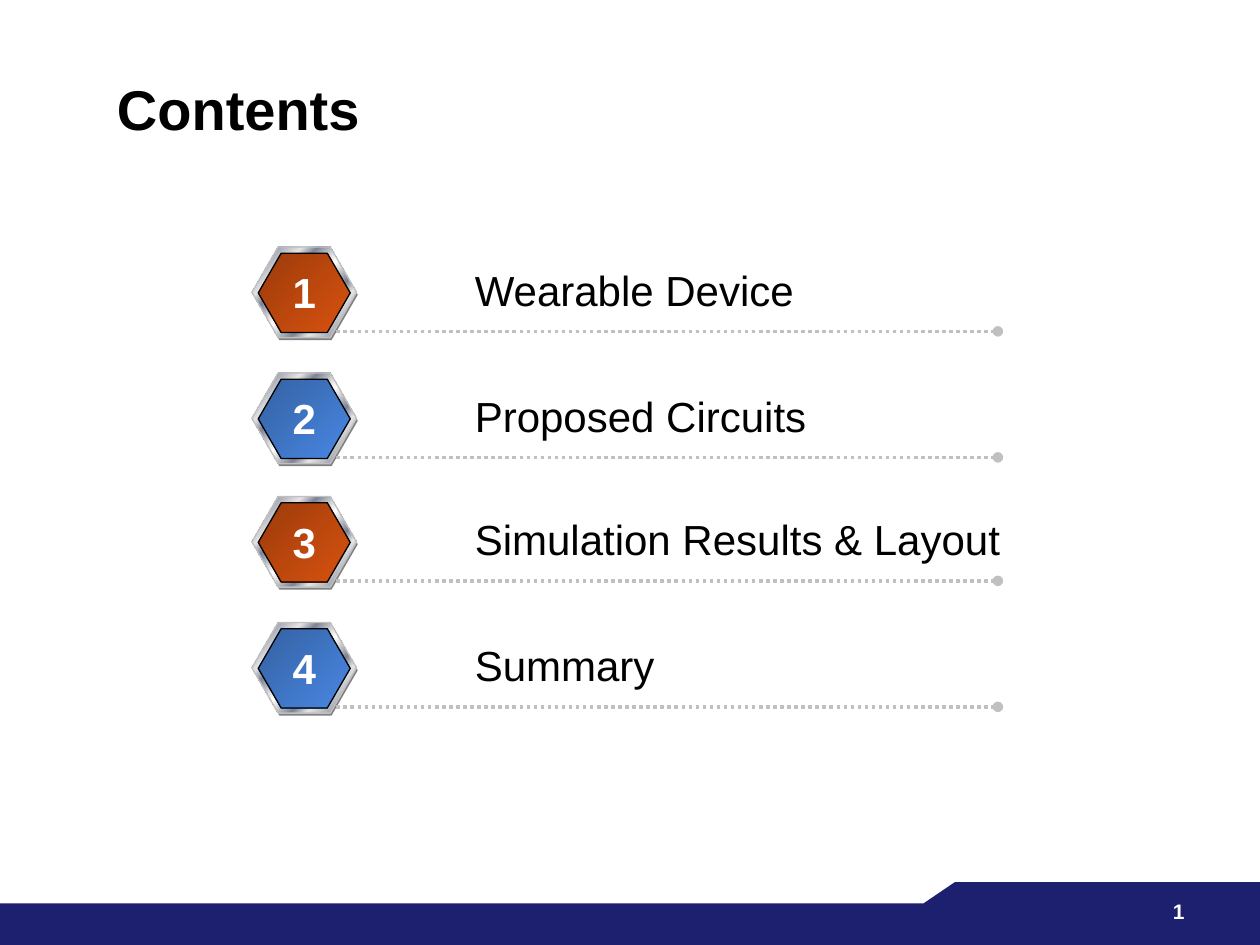
from lxml import etree
from pptx import Presentation
from pptx.dml.color import RGBColor
from pptx.enum import dml, shapes, text
from pptx.oxml.ns import qn
from pptx.util import Inches, Pt

FONT = "Arial"
NAVY, SILVER, WHITE, BLACK = "1D1F6F", "C0C0C0", "FFFFFF", "000000"
METAL = [(0, "E6E6E6"), (7, "7D8496"), (26, "E6E6E6"), (34, "7D8496"),
         (46, "E6E6E6"), (50, "FFFFFF"), (54, "E6E6E6"), (66, "7D8496"),
         (74, "E6E6E6"), (93, "7D8496"), (100, "E6E6E6")]
ORANGE = [(0, "9B3B0B"), (100, "D9520F")]
BLUE = [(0, "3461A2"), (100, "4987E3")]

# Top of each row, label, width of its box, badge colour
ROWS = [(1.96, "Wearable Device", 2.76, ORANGE),
        (2.96, "Proposed Circuits", 2.86, BLUE),
        (3.94, "Simulation Results & Layout", 4.41, ORANGE),
        (4.94, "Summary", 1.64, BLUE)]


def color(hex_code):
    return RGBColor.from_string(hex_code)


def style(sp, fill, line=None):
    """Fill with one colour, or with a diagonal gradient if given stops."""
    sp.shadow.inherit = False
    if isinstance(fill, str):
        sp.fill.solid()
        sp.fill.fore_color.rgb = color(fill)
    else:
        sp.fill.gradient()
        sp.fill.gradient_angle = 315
        stops = sp._element.spPr.find(".//" + qn("a:gsLst"))
        for gs in list(stops):
            stops.remove(gs)
        for pos, hex_code in fill:
            gs = etree.SubElement(stops, qn("a:gs"), pos=str(pos * 1000))
            etree.SubElement(gs, qn("a:srgbClr"), val=hex_code)
    if line:
        sp.line.color.rgb = color(line)
        sp.line.width = Pt(0.75)
    else:
        sp.line.fill.background()


def add_text(s, x, y, w, h, content, size, hex_code, bold=False,
             align=text.PP_ALIGN.LEFT, anchor=text.MSO_ANCHOR.TOP, wrap=True):
    tf = s.shapes.add_textbox(Inches(x), Inches(y), Inches(w), Inches(h)).text_frame
    tf.text = content
    tf.word_wrap = wrap
    tf.vertical_anchor = anchor
    if not wrap:
        tf.auto_size = text.MSO_AUTO_SIZE.SHAPE_TO_FIT_TEXT
    p = tf.paragraphs[0]
    p.alignment = align
    font = p.runs[0].font
    font.name, font.size, font.bold = FONT, Pt(size), bold
    font.color.rgb = color(hex_code)


def add_hexagon(s, x, y, w, h, fill, line=None):
    sp = s.shapes.add_shape(shapes.MSO_SHAPE.HEXAGON,
                            Inches(x), Inches(y), Inches(w), Inches(h))
    sp.adjustments[0] = 0.289
    style(sp, fill, line)


def add_dotted_line(s, x1, x2, y):
    line = s.shapes.add_connector(shapes.MSO_CONNECTOR.STRAIGHT,
                                  Inches(x1), Inches(y), Inches(x2), Inches(y))
    line.line.color.rgb = color(SILVER)
    line.line.width = Pt(2)
    line.line.dash_style = dml.MSO_LINE.ROUND_DOT
    etree.SubElement(line.line._get_or_add_ln(), qn("a:tailEnd"), type="oval")
    etree.SubElement(line._element.spPr, qn("a:effectLst"))


def add_row(s, number, top, label, width, badge):
    add_hexagon(s, 2.01, top + 0.02, 0.83, 0.72, "808080")
    add_hexagon(s, 2, top, 0.83, 0.72, METAL, SILVER)
    add_hexagon(s, 2.05, top + 0.05, 0.73, 0.63, badge, BLACK)
    add_dotted_line(s, 2.67, 7.92, top + 0.67)
    add_text(s, 3.67, top + 0.09, width, 0.51, label, 24, BLACK, wrap=False)
    add_text(s, 2.22, top + 0.11, 0.39, 0.5, str(number), 24, WHITE, bold=True,
             align=text.PP_ALIGN.CENTER, wrap=False)


def add_footer(s):
    band = s.shapes.add_shape(shapes.MSO_SHAPE.RECTANGLE,
                              0, Inches(7.17), Inches(10), Inches(0.33))
    style(band, NAVY)
    # Raised tab at the right
    points = [(7.33, 7.17), (7.58, 7), (10, 7), (10, 7.25), (7.33, 7.25)]
    outline = [(Inches(x), Inches(y)) for x, y in points]
    builder = s.shapes.build_freeform(*outline[0])
    builder.add_line_segments(outline[1:], close=True)
    style(builder.convert_to_shape(), NAVY)
    # Page number
    add_text(s, 7.42, 7.08, 2.08, 0.25, "1", 12, WHITE, bold=True,
             align=text.PP_ALIGN.RIGHT)


def main():
    prs = Presentation()
    prs.slide_width, prs.slide_height = Inches(10), Inches(7.5)
    s = prs.slides.add_slide(prs.slide_layouts[6])
    add_footer(s)
    add_text(s, 0.83, 0.55, 8.58, 0.62, "Contents", 32, BLACK, bold=True,
             anchor=text.MSO_ANCHOR.MIDDLE)
    for number, row in enumerate(ROWS, 1):
        add_row(s, number, *row)
    prs.save("out.pptx")


if __name__ == "__main__":
    main()
